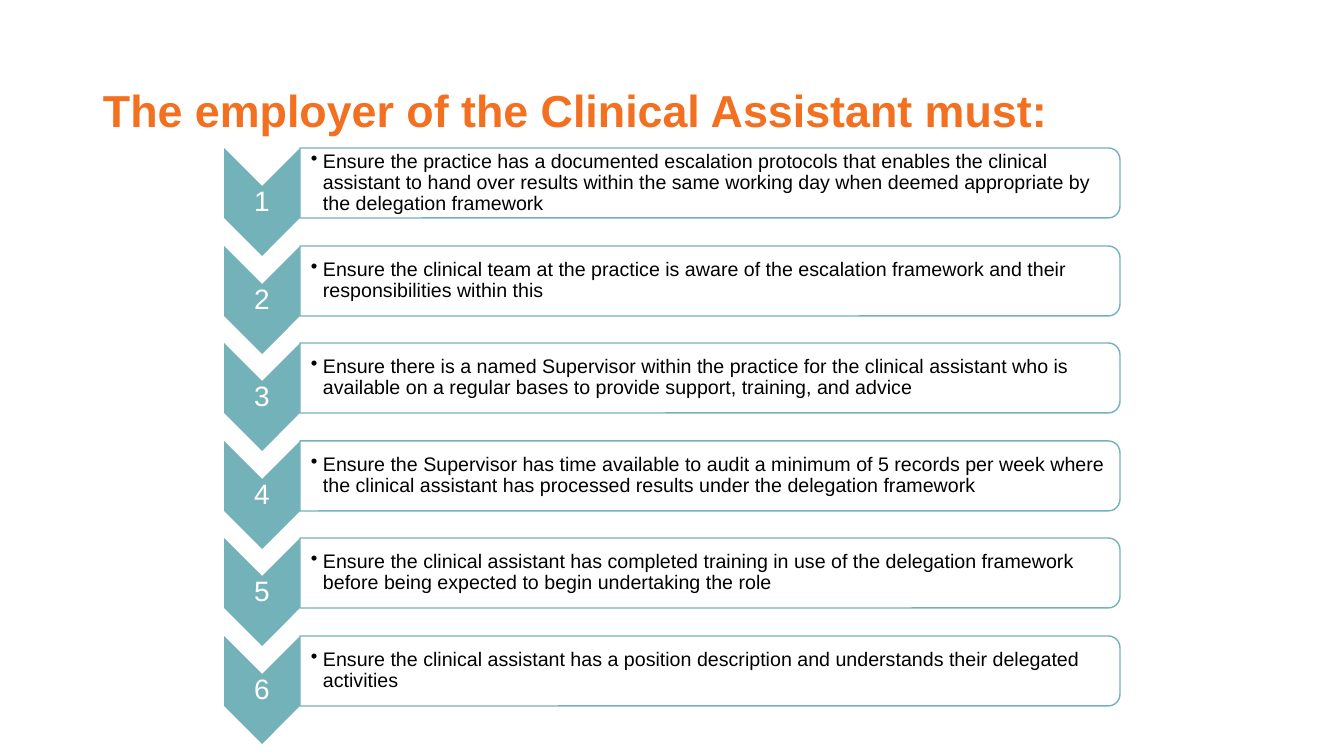
from lxml import etree
from pptx import Presentation
from pptx.dml.color import RGBColor
from pptx.enum.shapes import MSO_SHAPE
from pptx.enum.text import MSO_ANCHOR, PP_ALIGN
from pptx.oxml.ns import qn
from pptx.util import Pt

PX = 914400 / 100.8
CHEVRON = MSO_SHAPE.CHEVRON
PANEL = MSO_SHAPE.ROUND_2_SAME_RECTANGLE
MIDDLE = MSO_ANCHOR.MIDDLE
CENTER = PP_ALIGN.CENTER

COLORS = {"title": "F37021", "teal": "74B2BA", "white": "FFFFFF", "text": "000000"}

DUTIES = [
    "Ensure the practice has a documented escalation protocols that enables the clinical "
    "assistant to hand over results within the same working day when deemed appropriate by "
    "the delegation framework",
    "Ensure the clinical team at the practice is aware of the escalation framework and their "
    "responsibilities within this",
    "Ensure there is a named Supervisor within the practice for the clinical assistant who is "
    "available on a regular bases to provide support, training, and advice",
    "Ensure the Supervisor has time available to audit a minimum of 5 records per week where "
    "the clinical assistant has processed results under the delegation framework",
    "Ensure the clinical assistant has completed training in use of the delegation framework "
    "before being expected to begin undertaking the role",
    "Ensure the clinical assistant has a position description and understands their delegated "
    "activities",
]

FIRST_TOP, LAST_TOP = 148, 636
CHEVRON_LEFT, CHEVRON_WIDTH, CHEVRON_HEIGHT = 224, 76, 108
PANEL_LEFT, PANEL_WIDTH, PANEL_HEIGHT = 300, 820, 70

prs = Presentation()
prs.slide_width = round(1344 * PX)
prs.slide_height = round(756 * PX)
slide = prs.slides.add_slide(prs.slide_layouts[6])


def add_turned_shape(preset, left, top, width, height, color):
    """Add a shape turned by 90 degrees; the box given is the one seen on the slide."""
    turned_left = left + (width - height) / 2
    turned_top = top + (height - width) / 2
    box = (turned_left, turned_top, height, width)
    shape = slide.shapes.add_shape(preset, *(round(n * PX) for n in box))
    shape.rotation = 90
    shape.shadow.inherit = False
    shape.fill.solid()
    shape.fill.fore_color.rgb = RGBColor.from_string(COLORS[color])
    return shape


def add_text(text, box, insets, size, color, bullet=False):
    """Add a vertically centred text box; insets are left, top, right, bottom."""
    frame = slide.shapes.add_textbox(*(round(n * PX) for n in box)).text_frame
    frame.word_wrap = True
    frame.vertical_anchor = MIDDLE
    frame.margin_left, frame.margin_top, frame.margin_right, frame.margin_bottom = (
        round(n * PX) for n in insets)
    frame.text = text
    paragraph = frame.paragraphs[0]
    if bullet:
        properties = paragraph._p.get_or_add_pPr()
        properties.set("marL", str(round(12 * PX)))
        properties.set("indent", str(round(-12 * PX)))
        etree.SubElement(properties, qn("a:buChar"), char="•")
    paragraph.line_spacing = 0.9
    font = paragraph.runs[0].font
    font.name = "Arial"
    font.size = Pt(size)
    font.color.rgb = RGBColor.from_string(COLORS[color])
    return paragraph


title = add_text("The employer of the Clinical Assistant must:",
                 (93, 40, 1159, 146), (10, 5, 10, 5), 32, "title")
title.runs[0].font.bold = True

pitch = (LAST_TOP - FIRST_TOP) / (len(DUTIES) - 1)
for index, duty in enumerate(DUTIES):
    top = round(FIRST_TOP + index * pitch)

    chevron = add_turned_shape(CHEVRON, CHEVRON_LEFT, top, CHEVRON_WIDTH, CHEVRON_HEIGHT, "teal")
    chevron.line.fill.background()
    number = add_text(str(index + 1), (CHEVRON_LEFT, top + 38, CHEVRON_WIDTH, 32),
                      (1, 1, 1, 1), 20, "white")
    number.alignment = CENTER

    panel = add_turned_shape(PANEL, PANEL_LEFT, top, PANEL_WIDTH, PANEL_HEIGHT, "white")
    panel_color = panel.fill._xPr.find(qn("a:solidFill"))[0]
    etree.SubElement(panel_color, qn("a:alpha"), val="90000")
    panel.line.color.rgb = RGBColor.from_string(COLORS["teal"])
    panel.line.width = Pt(1)
    add_text(duty, (PANEL_LEFT, top + 3, 816, 64), (11, 1, 1, 1), 14, "text", bullet=True)

prs.save("out.pptx")
